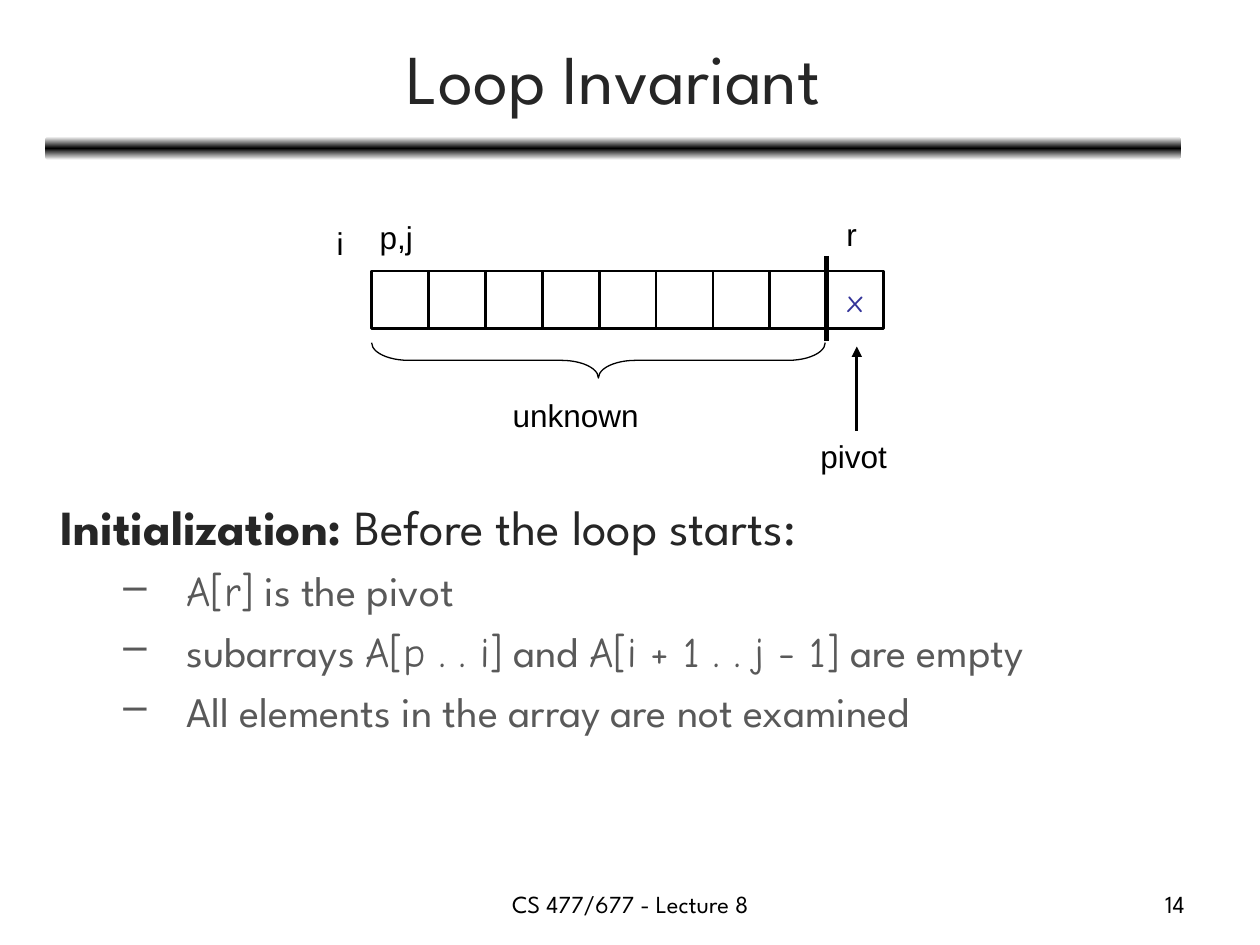
from copy import deepcopy

from pptx import Presentation
from pptx.dml.color import RGBColor
from pptx.enum.shapes import MSO_CONNECTOR, MSO_SHAPE
from pptx.enum.text import MSO_ANCHOR, PP_ALIGN
from pptx.oxml.ns import qn
from pptx.util import Pt

COLORS = {"black": "000000", "white": "FFFFFF", "title": "262626",
          "body": "595959", "pivot": "333399"}
SPARTAN, COMIC, ARIAL = "League Spartan", "Comic Neue", "Arial"
CELL_LEFT, CELL_TOP, CELL_W, CELL_H = 212.4, 154.8, 32.5, 33.1
UNKNOWN_CELLS = 8
PIVOT_LEFT = CELL_LEFT + UNKNOWN_CELLS * CELL_W


def rgb(name):
    """Return the named colour."""
    return RGBColor.from_string(COLORS[name])


def add_run(p, text, size, font=SPARTAN, color="black", bold=False):
    """Append one formatted run to a paragraph."""
    r = p.add_run()
    r.text = text
    r.font.size = Pt(size)
    r.font.name = font
    r.font.bold = bold
    r.font.color.rgb = rgb(color)


def add_box(s, x, y, w, h, wrap=True):
    """Add an empty text box and return its text frame."""
    tf = s.shapes.add_textbox(Pt(x), Pt(y), Pt(w), Pt(h)).text_frame
    tf.word_wrap = wrap
    return tf


def add_label(s, text, x, y, w, h, size=18, font=ARIAL, color="black",
              align=PP_ALIGN.CENTER, wrap=False):
    """Add a one-line label, centred vertically in its box."""
    tf = add_box(s, x, y, w, h, wrap)
    tf.vertical_anchor = MSO_ANCHOR.MIDDLE
    p = tf.paragraphs[0]
    p.alignment = align
    add_run(p, text, size, font, color)


def add_outline(s, kind, x, y, w, h, width):
    """Add an unfilled shape with a black outline."""
    sp = s.shapes.add_shape(kind, Pt(x), Pt(y), Pt(w), Pt(h))
    sp.shadow.inherit = False
    sp.fill.background()
    sp.line.color.rgb = rgb("black")
    sp.line.width = Pt(width)
    return sp


def add_line(s, x, y1, y2, width, arrow=False):
    """Add a vertical line, with an arrowhead at its end if asked."""
    line = s.shapes.add_connector(MSO_CONNECTOR.STRAIGHT, Pt(x), Pt(y1), Pt(x), Pt(y2))
    line.line.color.rgb = rgb("black")
    line.line.width = Pt(width)
    if arrow:
        ln = line.line._get_or_add_ln()
        ln.append(ln.makeelement(qn("a:tailEnd"), {"type": "triangle"}))
    sp_pr = line._element.spPr
    sp_pr.append(sp_pr.makeelement(qn("a:effectLst"), {}))


def add_rule(s):
    """Add the blurred bar below the title."""
    sp = s.shapes.add_shape(MSO_SHAPE.ROUNDED_RECTANGLE, Pt(26), Pt(78), Pt(649), Pt(13.5))
    sp.shadow.inherit = False
    sp.line.fill.background()
    sp.fill.gradient()
    sp.fill.gradient_angle = 90
    stops = sp._element.spPr.find(qn("a:gradFill")).find(qn("a:gsLst"))
    stops.append(deepcopy(stops[-1]))
    for stop, position, color in zip(sp.fill.gradient_stops, (0, 0.5, 1),
                                     ("white", "black", "white")):
        stop.position = position
        stop.color.rgb = rgb(color)


def add_array(s):
    """Add the array cells, the pivot cell and their marks."""
    for i in range(UNKNOWN_CELLS + 1):
        cell = add_outline(s, MSO_SHAPE.RECTANGLE, CELL_LEFT + i * CELL_W, CELL_TOP,
                           CELL_W, CELL_H, 1.5)
    p = cell.text_frame.paragraphs[0]
    p.alignment = PP_ALIGN.CENTER
    add_run(p, "x", 18, COMIC, "pivot")
    add_line(s, PIVOT_LEFT, 146.2, 195.1, 3)
    add_line(s, 489.6, 246.2, 198, 1.5, arrow=True)
    brace = add_outline(s, MSO_SHAPE.LEFT_BRACE, 331.9, 76.3, 20.2, 259.2, 0.75)
    brace.rotation = 270
    brace.adjustments[0] = 1.05
    for text, x, y, w in (("p,j", 209.5, 121, 33.8), ("i", 185, 124.6, 18.7),
                          ("r", 476.6, 119.5, 20.2), ("unknown", 285.8, 222.5, 86.4),
                          ("pivot", 461.5, 246.2, 52.6)):
        add_label(s, text, x, y, w, 28.8)


def set_indent(p, left, hanging, bullet=None):
    """Give a paragraph a hanging indent and an optional bullet."""
    p_pr = p._p.get_or_add_pPr()
    p_pr.set("marL", str(Pt(left)))
    p_pr.set("indent", str(-Pt(hanging)))
    if bullet:
        p_pr.append(p_pr.makeelement(qn("a:buChar"), {"char": bullet}))


def add_body(s):
    """Add the initialization statement and its points."""
    tf = add_box(s, 27.4, 280.1, 648, 240.5)
    p = tf.paragraphs[0]
    p.space_before = Pt(5.6)
    set_indent(p, 42, 42)
    add_run(p, "Initialization: ", 28, color="title", bold=True)
    add_run(p, "Before the loop starts:", 28, color="title")
    points = (
        (("A[r]", COMIC), (" is the pivot", SPARTAN)),
        (("subarrays ", SPARTAN), ("A[p . . i]", COMIC), (" and ", SPARTAN),
         ("A[i + 1 . . j - 1]", COMIC), (" are empty", SPARTAN)),
        (("All elements in the array are not examined", SPARTAN),),
    )
    for runs in points:
        p = tf.add_paragraph()
        p.level = 1
        p.space_before = Pt(5.6)
        set_indent(p, 72, 36, "–")
        for text, font in runs:
            add_run(p, text, 24, font, "body")


def main():
    """Build the slide and save it."""
    prs = Presentation()
    prs.slide_width, prs.slide_height = Pt(720), Pt(540)
    s = prs.slides.add_slide(prs.slide_layouts[6])
    add_rule(s)
    add_label(s, "Loop Invariant", 26.6, 7.9, 648, 71.3, 40, SPARTAN, "title", wrap=True)
    add_array(s)
    add_body(s)
    add_label(s, "CS 477/677 - Lecture 8", 246.2, 504, 228.2, 25.2, 14, SPARTAN, wrap=True)
    add_label(s, "14", 516.2, 504, 167.8, 25.2, 14, SPARTAN,
              align=PP_ALIGN.RIGHT, wrap=True)
    prs.save("out.pptx")


if __name__ == "__main__":
    main()
